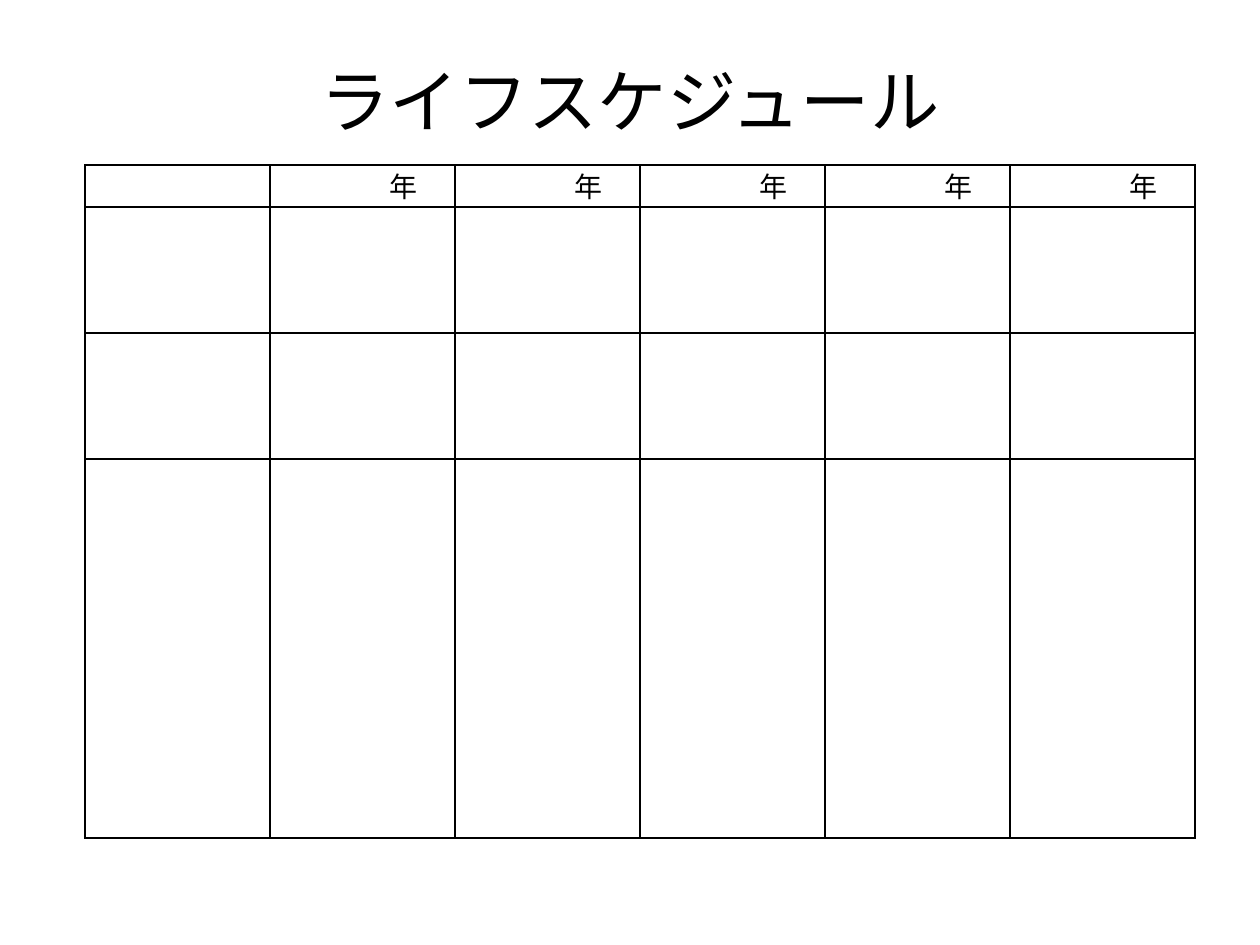
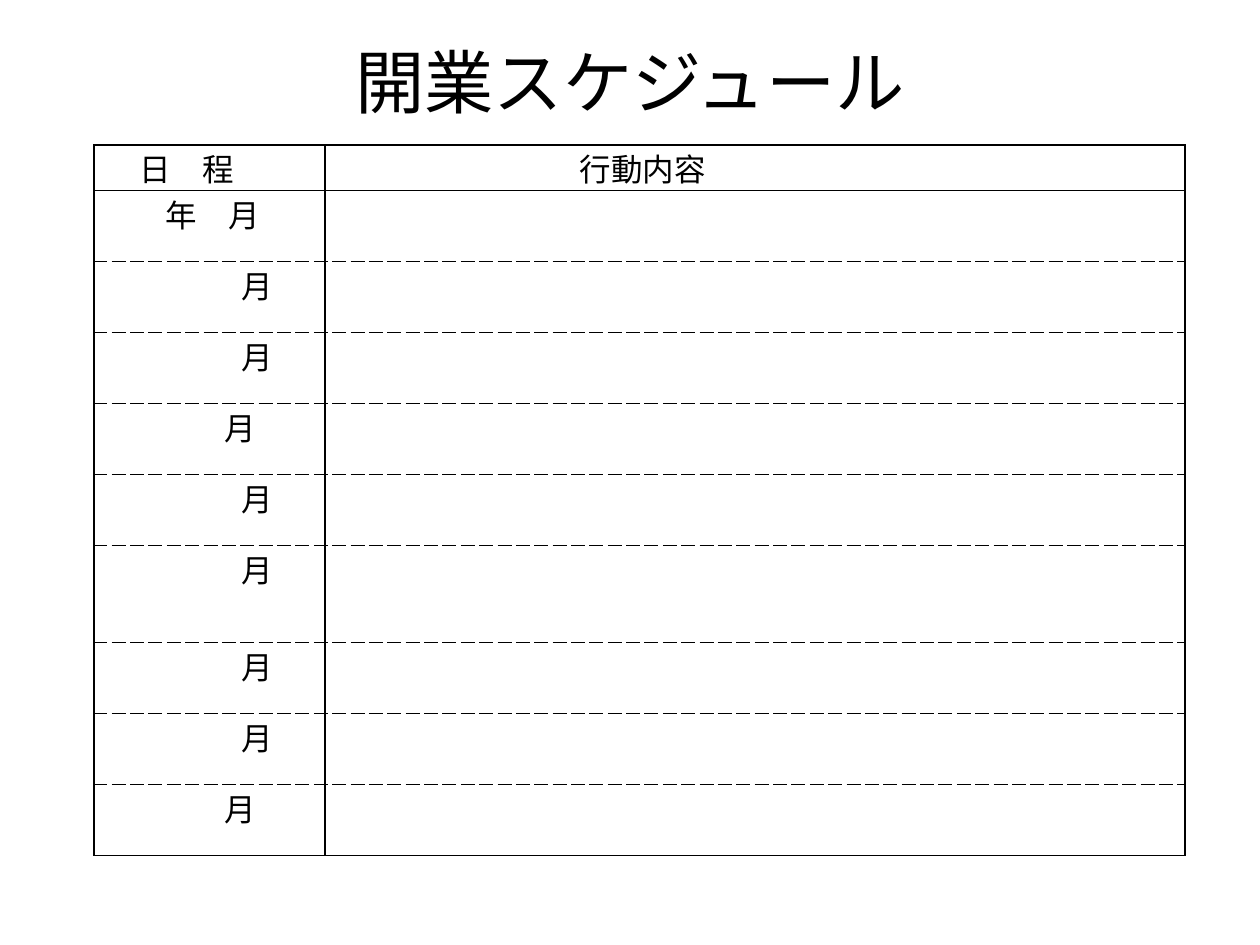
from dataclasses import dataclass

from lxml.etree import SubElement
from pptx import Presentation
from pptx.dml.color import RGBColor
from pptx.enum.text import MSO_ANCHOR, MSO_AUTO_SIZE, PP_ALIGN
from pptx.oxml.ns import qn
from pptx.slide import Slide
from pptx.table import _Cell
from pptx.text.text import _Paragraph
from pptx.util import Emu, Pt

EMU_PER_PX = 914400 / 126
SLIDE_WIDTH, SLIDE_HEIGHT = 1260, 945
TITLE_HEIGHT = 90


@dataclass(frozen=True)
class Theme:
    ink: str = "000000"
    title_font: str = "Calibri"
    header_font: str = "TeX Gyre Schola"
    japanese_font: str = "Noto Sans CJK JP"
    title_size: float = 39.6
    year_size: float = 16
    plan_size: float = 18
    rule_width: float = 1
    cell_inset: int = 9


@dataclass(frozen=True)
class Entry:
    row: int
    column: int
    text: str
    font: str
    size: float
    indent: int = 0
    tabs: tuple[int, ...] = ()
    align: PP_ALIGN = PP_ALIGN.LEFT


@dataclass(frozen=True)
class Schedule:
    title: str
    title_top: int
    left: int
    top: int
    columns: list[int]
    rows: list[int]
    entries: list[Entry]
    dashed: bool = False


THEME = Theme()


def px(length: int) -> Emu:
    """Turn pixels into EMU."""
    return Emu(round(length * EMU_PER_PX))


def add_run(paragraph: _Paragraph, text: str, font: str, size: float) -> None:
    """Add one run in the ink colour with Latin and Japanese fonts."""
    run = paragraph.add_run()
    run.text = text
    run.font.size = Pt(size)
    run.font.name = font
    run.font.color.rgb = RGBColor.from_string(THEME.ink)
    SubElement(run.font._element, qn("a:ea"), typeface=THEME.japanese_font)


def add_title(slide: Slide, text: str, top: int) -> None:
    """Add the centred title across the slide."""
    shape = slide.shapes.add_textbox(0, px(top), px(SLIDE_WIDTH), px(TITLE_HEIGHT))
    frame = shape.text_frame
    frame.word_wrap = True
    frame.auto_size = MSO_AUTO_SIZE.NONE
    frame.vertical_anchor = MSO_ANCHOR.MIDDLE
    frame.margin_top = frame.margin_bottom = 0
    paragraph = frame.paragraphs[0]
    paragraph.alignment = PP_ALIGN.CENTER
    add_run(paragraph, text, THEME.title_font, THEME.title_size)


def style_cell(cell: _Cell, top_dash: str, bottom_dash: str) -> None:
    """Give a cell its insets, rules and empty fill."""
    cell.margin_left = cell.margin_right = px(THEME.cell_inset)
    cell.margin_top = cell.margin_bottom = 0
    properties = cell._tc.get_or_add_tcPr()
    edges = {"L": "solid", "R": "solid", "T": top_dash, "B": bottom_dash}
    for edge, dash in edges.items():
        line = SubElement(properties, qn(f"a:ln{edge}"), w=str(Pt(THEME.rule_width)))
        fill = SubElement(line, qn("a:solidFill"))
        SubElement(fill, qn("a:srgbClr"), val=THEME.ink)
        SubElement(line, qn("a:prstDash"), val=dash)
    cell.fill.background()


def fill_cell(cell: _Cell, entry: Entry) -> None:
    """Write an entry with its indent and tab stops."""
    paragraph = cell.text_frame.paragraphs[0]
    paragraph.alignment = entry.align
    properties = paragraph._p.get_or_add_pPr()
    properties.set("marL", str(px(entry.indent)))
    properties.set("indent", "0")
    if entry.tabs:
        tab_list = SubElement(properties, qn("a:tabLst"))
        for stop in entry.tabs:
            SubElement(tab_list, qn("a:tab"), pos=str(px(stop)), algn="l")
    add_run(paragraph, entry.text, entry.font, entry.size)


def add_schedule(presentation: Presentation, schedule: Schedule) -> None:
    """Add a slide with a title and a ruled schedule table."""
    slide = presentation.slides.add_slide(presentation.slide_layouts[6])
    add_title(slide, schedule.title, schedule.title_top)
    row_count = len(schedule.rows)
    table = slide.shapes.add_table(
        row_count, len(schedule.columns), px(schedule.left), px(schedule.top),
        px(sum(schedule.columns)), px(sum(schedule.rows)),
    ).table
    table.first_row = table.horz_banding = False
    for column, width in zip(table.columns, schedule.columns):
        column.width = px(width)
    solid_rules = (0, 1, row_count)
    dashes = [
        "dash" if schedule.dashed and rule not in solid_rules else "solid"
        for rule in range(row_count + 1)
    ]
    for index, height in enumerate(schedule.rows):
        table.rows[index].height = px(height)
        for cell in table.rows[index].cells:
            style_cell(cell, dashes[index], dashes[index + 1])
    for entry in schedule.entries:
        fill_cell(table.cell(entry.row, entry.column), entry)


def life_schedule() -> Schedule:
    """Describe the five-year life schedule."""
    years = [
        Entry(0, column, "年", THEME.header_font, THEME.year_size,
              indent=82, align=PP_ALIGN.CENTER)
        for column in range(1, 6)
    ]
    return Schedule("ライフスケジュール", 55, 85, 165, [185] * 6,
                    [42, 126, 126, 379], years)


def opening_schedule() -> Schedule:
    """Describe the month-by-month opening schedule."""
    size = THEME.plan_size
    month_indent, short_indent = 139, 122
    short_rows = (4, 9)
    headers = [
        Entry(0, 0, "日　程", THEME.header_font, size, indent=37),
        Entry(0, 1, "行動内容", THEME.header_font, size, indent=246),
    ]
    first_month = Entry(1, 0, "\t年\t月", THEME.japanese_font, size,
                        tabs=(63, month_indent))
    months = [
        Entry(row, 0, "月", THEME.japanese_font, size,
              indent=short_indent if row in short_rows else month_indent)
        for row in range(2, 10)
    ]
    return Schedule("開業スケジュール", 36, 94, 145, [231, 860],
                    [45] + [71] * 5 + [97] + [71] * 3,
                    [*headers, first_month, *months], dashed=True)


def main() -> None:
    """Build and save the presentation."""
    presentation = Presentation()
    presentation.slide_width = px(SLIDE_WIDTH)
    presentation.slide_height = px(SLIDE_HEIGHT)
    for schedule in (life_schedule(), opening_schedule()):
        add_schedule(presentation, schedule)
    presentation.save("out.pptx")


if __name__ == "__main__":
    main()
